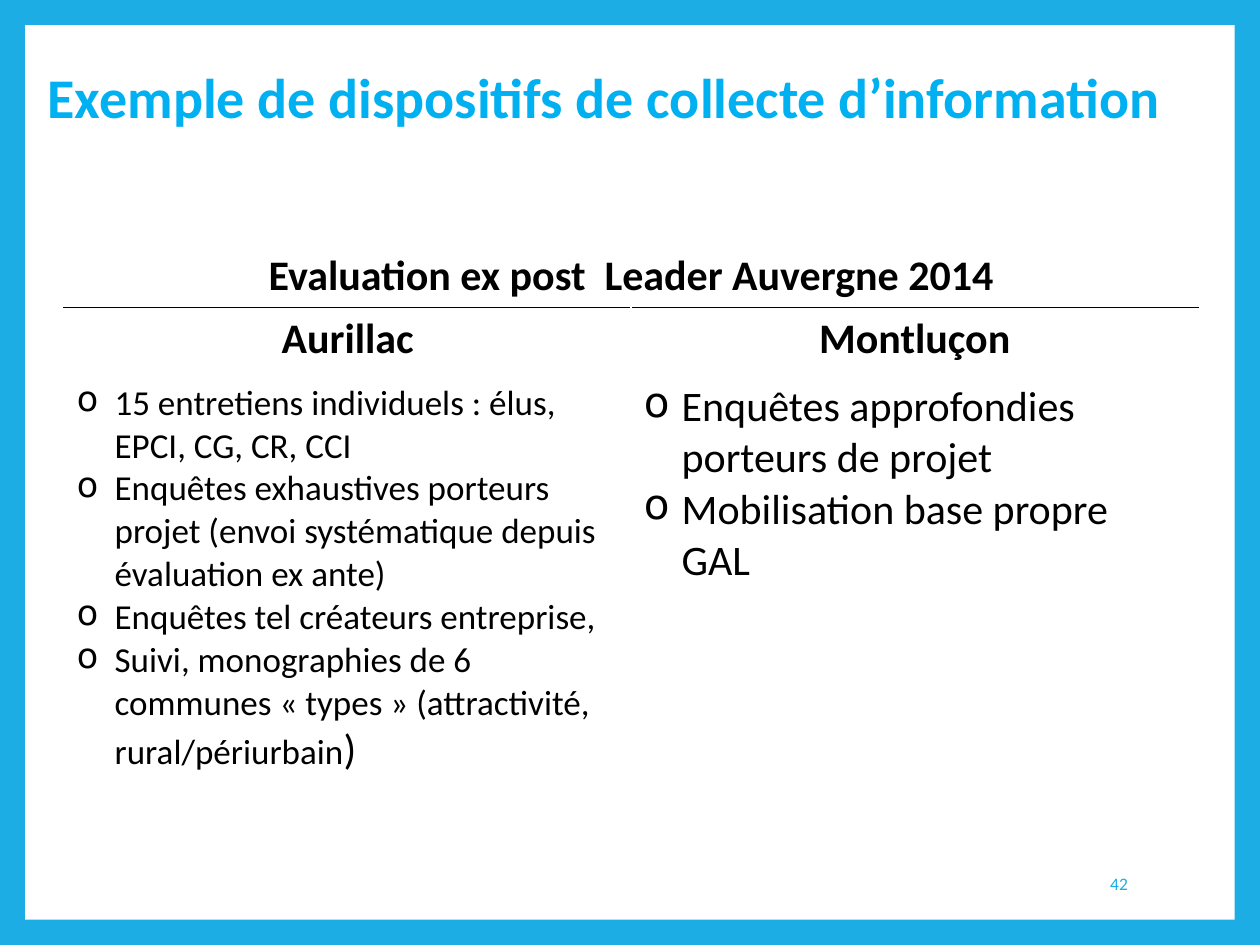
import pptx
import pptx.dml.color
import pptx.enum.shapes
import pptx.enum.text
import pptx.oxml
import pptx.oxml.ns
import pptx.util
from pptx.util import Inches

THEME = {
    "font": "Calibri",
    "frame": "1CADE4", "title": "00B0F0", "text": "000000", "paper": "FFFFFF",
    "title_size": 32, "large": 24, "body": 20, "number_size": 10,
}
ALIGN = pptx.enum.text.PP_ALIGN
LARGE, BODY = THEME["large"], THEME["body"]

TITLE = "Exemple de dispositifs de collecte d’information"
PAGE = "42"
HEADING = "Evaluation ex post  Leader Auvergne 2014"
# Each column: name, then bullets, each a list of (text, size) runs
COLUMNS = [
    ("Aurillac", [
        [("15 entretiens individuels : élus, EPCI, CG, CR, CCI", BODY)],
        [("Enquêtes exhaustives porteurs projet (envoi systématique depuis évaluation ex ante)", BODY)],
        [("Enquêtes tel créateurs entreprise,", BODY)],
        [("Suivi, monographies de 6 communes « types » (attractivité, rural/périurbain", BODY),
         (")", LARGE)],
    ]),
    ("Montluçon", [
        [("Enquêtes approfondies porteurs de projet", LARGE)],
        [("Mobilisation base propre GAL", LARGE)],
    ]),
]
ROW_HEIGHTS = [0.5, 0.54, 3.17]
TABLE_LEFT, TABLE_TOP, TABLE_WIDTH = 0.51, 1.94, 9
MARGIN = 0.2


def rgb(name):
    return pptx.dml.color.RGBColor.from_string(THEME[name])


def add_run(p, text, size, color="text", bold=False):
    r = p.add_run()
    r.text = text
    r.font.name = THEME["font"]
    r.font.size = pptx.util.Pt(size)
    r.font.bold = bold
    r.font.color.rgb = rgb(color)


def add_label(slide, box, text, size, color, bold=False, align=ALIGN.LEFT):
    tf = slide.shapes.add_textbox(*map(Inches, box)).text_frame
    tf.word_wrap = True
    tf.vertical_anchor = pptx.enum.text.MSO_ANCHOR.MIDDLE
    p = tf.paragraphs[0]
    p.alignment = align
    add_run(p, text, size, color, bold)
    return p


def style_cell(cell, **borders):
    """Clear the fill and draw 1 pt borders, paper-coloured unless named by side."""
    tc_pr = cell._tc.get_or_add_tcPr()
    for side in "LRTB":
        color = THEME[borders.get(side, "paper")]
        tc_pr.append(pptx.oxml.parse_xml(
            f'<a:ln{side} {pptx.oxml.ns.nsdecls("a")} w="12700"><a:solidFill>'
            f'<a:srgbClr val="{color}"/></a:solidFill></a:ln{side}>'))
    cell.fill.background()


def add_heading(cell, text):
    p = cell.text_frame.paragraphs[0]
    p.alignment = ALIGN.CENTER
    add_run(p, text, LARGE, bold=True)


def add_bullets(cell, bullets):
    tf = cell.text_frame
    for i, runs in enumerate(bullets):
        p = tf.add_paragraph() if i else tf.paragraphs[0]
        p_pr = p._p.get_or_add_pPr()
        p_pr.set("marL", str(Inches(0.3)))
        p_pr.set("indent", str(Inches(-0.3)))
        p_pr.append(pptx.oxml.parse_xml(
            f'<a:buChar {pptx.oxml.ns.nsdecls("a")} char="o"/>'))
        for text, size in runs:
            add_run(p, text, size)


def add_comparison(slide):
    table = slide.shapes.add_table(
        len(ROW_HEIGHTS), len(COLUMNS), Inches(TABLE_LEFT), Inches(TABLE_TOP),
        Inches(TABLE_WIDTH), Inches(sum(ROW_HEIGHTS))).table
    table.first_row = table.horz_banding = False
    for row, height in zip(table.rows, ROW_HEIGHTS):
        row.height = Inches(height)
    for col, (name, bullets) in enumerate(COLUMNS):
        heading, subheading, body = (table.cell(row, col) for row in range(3))
        style_cell(heading, B="text")
        style_cell(subheading, T="text")
        style_cell(body)
        add_heading(subheading, name)
        add_bullets(body, bullets)
    table.cell(0, 0).merge(table.cell(0, len(COLUMNS) - 1))
    add_heading(table.cell(0, 0), HEADING)


def main():
    prs = pptx.Presentation()
    prs.slide_width, prs.slide_height = Inches(10), Inches(7.5)
    slide = prs.slides.add_slide(prs.slide_layouts[6])
    slide.background.fill.solid()
    slide.background.fill.fore_color.rgb = rgb("frame")

    sp = slide.shapes.add_shape(
        pptx.enum.shapes.MSO_SHAPE.RECTANGLE, Inches(MARGIN), Inches(MARGIN),
        prs.slide_width - Inches(2 * MARGIN), prs.slide_height - Inches(2 * MARGIN))
    sp.shadow.inherit = False
    sp.fill.solid()
    sp.fill.fore_color.rgb = rgb("paper")
    sp.line.fill.background()

    p = add_label(slide, (0.28, 0.44, 9.61, 0.71), TITLE, THEME["title_size"], "title", bold=True)
    p.line_spacing = 0.9
    add_comparison(slide)
    add_label(slide, (7.65, 6.81, 1.4, 0.4), PAGE, THEME["number_size"], "frame", align=ALIGN.RIGHT)
    prs.save("out.pptx")


if __name__ == "__main__":
    main()
